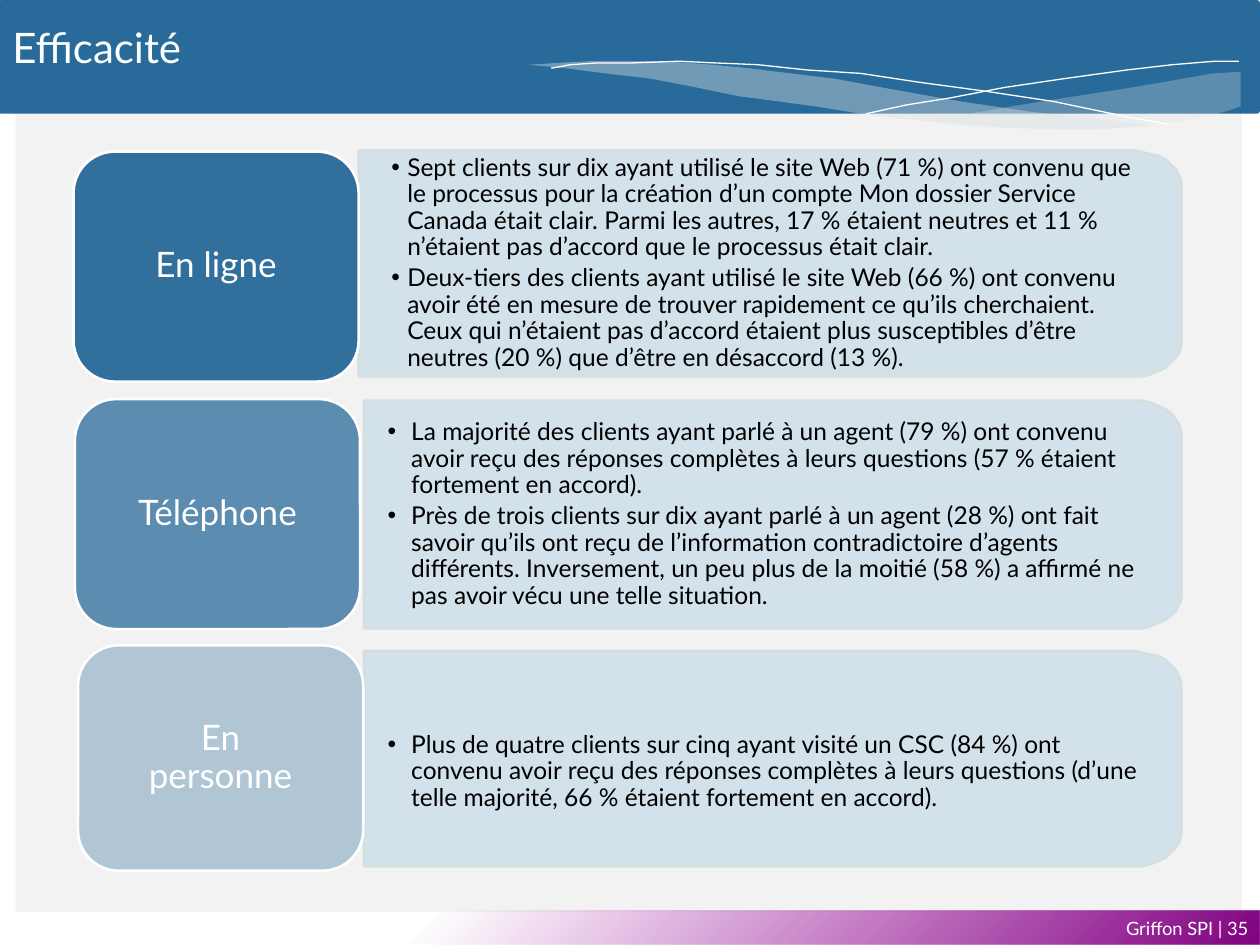
import math
import lxml.etree
import pptx
import pptx.dml.color
import pptx.enum.shapes
import pptx.enum.text
import pptx.oxml.ns
import pptx.util

Pt = pptx.util.Pt
qn = pptx.oxml.ns.qn
ALIGN = pptx.enum.text.PP_ALIGN
ANCHOR = pptx.enum.text.MSO_ANCHOR
SHAPE = pptx.enum.shapes.MSO_SHAPE

COLORS = {
    "white": "FFFFFF", "black": "000000", "grey": "F2F2F2", "blue": "1D6294",
    "panel": "CFE0EA", "edge": "D3E0DF", "wave": "DFE3E5",
    "purple": "800080", "violet": "9A009A",
}


def write_text(shape, *texts, size, color="white", align=ALIGN.LEFT, anchor=ANCHOR.MIDDLE,
               insets=(7.2, 3.6, 7.2, 3.6), hang=0, spacing=1, after=0):
    frame = shape.text_frame
    frame.word_wrap = True
    frame.vertical_anchor = anchor
    frame.margin_left, frame.margin_top, frame.margin_right, frame.margin_bottom = map(Pt, insets)
    for index, text in enumerate(texts):
        para = frame.add_paragraph() if index else frame.paragraphs[0]
        if hang:
            properties = para._p.get_or_add_pPr()
            properties.set("marL", str(Pt(hang)))
            properties.set("indent", str(-Pt(hang)))
            lxml.etree.SubElement(properties, qn("a:buFont")).set("typeface", "Arial")
            lxml.etree.SubElement(properties, qn("a:buChar")).set("char", "•")
        para.alignment = align
        para.line_spacing = spacing
        para.space_after = Pt(after)
        span = para.add_run()
        span.text = text
        span.font.name = "Lato"
        span.font.size = Pt(size)
        span.font.color.rgb = pptx.dml.color.RGBColor.from_string(COLORS[color])


def style_shape(shape, fill=None, opacity=100, line=None, width=1.5):
    shape.shadow.inherit = False
    if fill:
        shape.fill.solid()
        shape.fill.fore_color.rgb = pptx.dml.color.RGBColor.from_string(COLORS[fill])
        if opacity < 100:
            color = shape._element.spPr.find(qn("a:solidFill"))[0]
            lxml.etree.SubElement(color, qn("a:alpha")).set("val", str(opacity * 1000))
    else:
        shape.fill.background()
    if line:
        shape.line.color.rgb = pptx.dml.color.RGBColor.from_string(COLORS[line])
        shape.line.width = Pt(width)
    else:
        shape.line.fill.background()


deck = pptx.Presentation()
deck.slide_width, deck.slide_height = Pt(720), Pt(540)
page = deck.slides.add_slide(deck.slide_layouts[6])

backdrop = page.shapes.add_shape(SHAPE.RECTANGLE, Pt(9), Pt(52.5), Pt(700.5), Pt(468.5))
style_shape(backdrop, "grey")

footer = page.shapes.add_shape(SHAPE.RECTANGLE, Pt(-1), Pt(520.5), Pt(721), Pt(19.5))
style_shape(footer)
gradient = lxml.etree.Element(qn("a:gradFill"))
stops = lxml.etree.SubElement(gradient, qn("a:gsLst"))
for position, name, opacity in ((0, "purple", 100), (66, "violet", 0)):
    stop = lxml.etree.SubElement(stops, qn("a:gs"), pos=str(position * 1000))
    color = lxml.etree.SubElement(stop, qn("a:srgbClr"), val=COLORS[name])
    lxml.etree.SubElement(color, qn("a:alpha"), val=str(opacity * 1000))
sweep = lxml.etree.SubElement(gradient, qn("a:path"))
sweep.set("path", "circle")
lxml.etree.SubElement(sweep, qn("a:fillToRect"), l="100000", t="100000")
empty_fill = footer._element.spPr.find(qn("a:noFill"))
footer._element.spPr.replace(empty_fill, gradient)

credit = page.shapes.add_textbox(Pt(0.5), Pt(512.5), Pt(720), Pt(35.5))
write_text(credit, "Griffon SPI | 35", size=10.5, align=ALIGN.RIGHT)

header = page.shapes.add_shape(SHAPE.ROUNDED_RECTANGLE, Pt(-1), Pt(0), Pt(721), Pt(65))
header.adjustments[0] = 0.03
style_shape(header, "blue", 95)

waves = [
    (29, [(709, 41), (692.6, 42.5), (676, 44.6), (658.8, 47.5), (640.8, 51.1), (607.7, 56.2),
          (577.4, 61.2), (549.4, 65.5), (522.7, 68.4), (540.7, 70.6), (564.5, 72.7),
          (586.8, 73.4), (607, 74.2), (625.7, 73.8), (642.2, 72.7), (657.4, 71.3),
          (671.8, 69.8), (684.7, 67), (693.4, 65.5), (709, 61.2)]),
    (40, [(301.7, 37.4), (323.3, 38.9), (346.3, 41.8), (371.5, 45.4), (398.2, 50.4),
          (421.9, 54.7), (445, 58.3), (466.6, 61.2), (497.5, 65.5), (525.6, 69.1),
          (550.8, 71.3), (574.6, 73.1), (596.2, 74.2), (621.4, 74.2), (644.4, 73.1),
          (659.5, 72), (627.1, 68.4), (590.4, 64.1), (549.4, 57.6), (504, 50.4),
          (477.4, 45.4), (452.2, 41.8), (428.4, 38.9), (406.8, 37.1), (380.2, 35.3),
          (356.4, 34.6), (335.5, 35), (317.5, 36)]),
    (0, [(315.4, 38.9), (326.2, 37.4), (340.6, 36.2), (360.7, 35.5), (388, 35.3), (409, 36),
         (433.4, 37.4), (460.8, 39.6), (491.8, 42.5), (524.9, 46.8), (561.6, 51.8),
         (601.9, 58.3), (645.1, 67), (668.2, 71.3)]),
    (0, [(494.6, 64.8), (517.7, 60.5), (542.9, 56.2), (573.8, 50.4), (608.4, 45.4),
         (644.4, 40.3), (669.6, 37.4), (694.1, 35.3), (708.5, 34.6)]),
]
for opacity, points in waves:
    builder = page.shapes.build_freeform(*points[0], scale=Pt(1))
    builder.add_line_segments(points[1:], close=opacity > 0)
    wave = builder.convert_to_shape()
    if opacity:
        style_shape(wave, "wave", opacity)
    else:
        style_shape(wave, line="white", width=0)

title = page.shapes.add_textbox(Pt(0), Pt(8.6), Pt(720), Pt(61))
write_text(title, "Efficacité", size=24, anchor=ANCHOR.TOP)

channels = [
    {"name": "En ligne", "card": (42, 86.6, 131.5), "opacity": 90,
     "panel": (205, 86.4, 128.5), "insets": (18.7, 15.8, 25.2, 15.8), "hang": 9,
     "findings": [
         "Sept clients sur dix ayant utilisé le site Web (71 %) ont convenu que le processus pour la création d’un compte Mon dossier Service Canada était clair. Parmi les autres, 17 % étaient neutres et 11 % n’étaient pas d’accord que le processus était clair.",
         "Deux-tiers des clients ayant utilisé le site Web (66 %) ont convenu avoir été en mesure de trouver rapidement ce qu’ils cherchaient. Ceux qui n’étaient pas d’accord étaient plus susceptibles d’être neutres (20 %) que d’être en désaccord (13 %).",
     ]},
    {"name": "Téléphone", "card": (42.8, 228, 131.5), "opacity": 70,
     "panel": (207.5, 228.8, 130.5), "insets": (13.5, 13, 20, 13), "hang": 13.5,
     "findings": [
         "La majorité des clients ayant parlé à un agent (79 %) ont convenu avoir reçu des réponses complètes à leurs questions (57 % étaient fortement en accord).",
         "Près de trois clients sur dix ayant parlé à un agent (28 %) ont fait savoir qu’ils ont reçu de l’information contradictoire d’agents différents. Inversement, un peu plus de la moitié (58 %) a affirmé ne pas avoir vécu une telle situation.",
     ]},
    {"name": "En personne", "card": (44.6, 368.8, 128.8), "opacity": 30,
     "panel": (207.5, 372.4, 122.5), "insets": (13.5, 28, 20, 13), "hang": 13.5,
     "findings": [
         "Plus de quatre clients sur cinq ayant visité un CSC (84 %) ont convenu avoir reçu des réponses complètes à leurs questions (d’une telle majorité, 66 % étaient fortement en accord).",
     ]},
]
panel_right, corner_width, corner_height = 675.2, 27, 21.5
turn = [math.radians(step * 10) for step in range(10)]
for channel in channels:
    left, top, height = channel["panel"]
    bottom = top + height
    center = panel_right - corner_width
    upper = [(center + corner_width * math.sin(angle),
              top + corner_height * (1 - math.cos(angle))) for angle in turn]
    lower = [(x, top + bottom - y) for x, y in reversed(upper)]
    builder = page.shapes.build_freeform(left, top, scale=Pt(1))
    builder.add_line_segments(upper + lower + [(left, bottom)], close=True)
    panel = builder.convert_to_shape()
    style_shape(panel, "panel", 90, "edge")
    write_text(panel, *channel["findings"], size=14, color="black", insets=channel["insets"],
               hang=channel["hang"], spacing=0.9, after=2.5)

    left, top, height = channel["card"]
    card = page.shapes.add_shape(SHAPE.ROUNDED_RECTANGLE, Pt(left), Pt(top), Pt(163), Pt(height))
    card.adjustments[0] = 0.18
    style_shape(card, "blue", channel["opacity"], "white")
    write_text(card, channel["name"], size=20, align=ALIGN.CENTER, insets=(22, 9, 22, 9), spacing=0.9)

deck.save("out.pptx")
